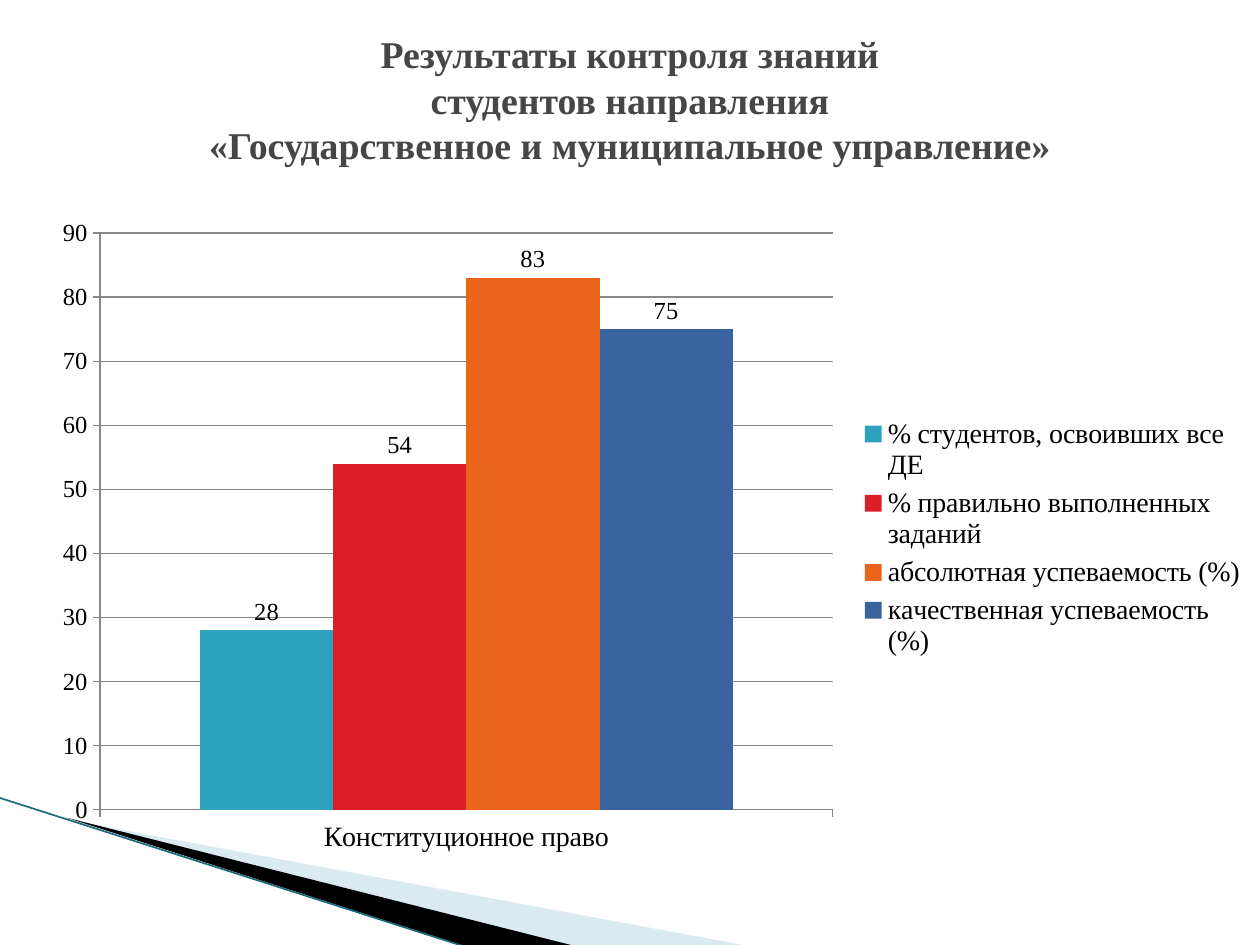
from lxml import etree
from pptx import Presentation
from pptx import util as u
from pptx.chart.data import CategoryChartData
from pptx.dml.color import RGBColor
from pptx.enum import chart as ch, shapes, text
from pptx.oxml import parse_xml
from pptx.oxml.ns import nsdecls, qn

FONT = "Times New Roman"
BLACK = RGBColor(0, 0, 0)
GREY = RGBColor(0x46, 0x46, 0x46)
RULE = RGBColor(0x87, 0x87, 0x87)
PALE = RGBColor(0xA0, 0xCB, 0xDC)
TEAL = RGBColor(0x1B, 0x6B, 0x80)

TITLE = ("Результаты контроля знаний\vстудентов направления\v"
         "«Государственное и муниципальное управление»")
SUBJECT = "Конституционное право"
SERIES = [
    ("% студентов, освоивших все ДЕ", 28, RGBColor(0x2D, 0xA2, 0xBF)),
    ("% правильно выполненных заданий", 54, RGBColor(0xDA, 0x1F, 0x28)),
    ("абсолютная успеваемость (%)", 83, RGBColor(0xEB, 0x64, 0x1B)),
    ("качественная успеваемость (%)", 75, RGBColor(0x39, 0x63, 0x9D)),
]


def style(font, size, color=BLACK, bold=False):
    looks = {"name": FONT, "size": u.Pt(size), "bold": bold}
    for key, value in looks.items():
        setattr(font, key, value)
    font.color.rgb = color


def wedge(slide, points, color, alpha=None):
    first, *rest = [(u.Inches(x), u.Inches(y)) for x, y in points]
    pen = slide.shapes.build_freeform(*first)
    pen.add_line_segments(rest, close=True)
    shape = pen.convert_to_shape()
    shape.shadow.inherit = False
    shape.fill.solid()
    shape.fill.fore_color.rgb = color
    shape.line.fill.background()
    if alpha:
        tint = shape.fill._xPr.find(qn("a:solidFill"))[0]
        etree.SubElement(tint, qn("a:alpha"), val=str(alpha * 1000))


def stroke(slide, start, end, color, width):
    ends = [u.Inches(n) for n in (*start, *end)]
    line = slide.shapes.add_connector(shapes.MSO_CONNECTOR.STRAIGHT, *ends)
    line.line.color.rgb = color
    line.line.width = u.Pt(width)
    etree.SubElement(line._element.spPr, qn("a:effectLst"))


def layout(x, y, w, h, inner=False):
    target = '<c:layoutTarget val="inner"/>' if inner else ""
    return parse_xml(
        f'<c:layout {nsdecls("c")}><c:manualLayout>{target}'
        '<c:xMode val="edge"/><c:yMode val="edge"/>'
        f'<c:x val="{x}"/><c:y val="{y}"/><c:w val="{w}"/><c:h val="{h}"/>'
        '</c:manualLayout></c:layout>')


def place(parent, index, box):
    for old in parent.findall(qn("c:layout")):
        parent.remove(old)
    parent.insert(index, box)


def title(slide, words):
    box = slide.shapes.add_textbox(*map(u.Inches, (0.5, 0.16, 9, 1.25)))
    frame = box.text_frame
    frame.word_wrap = True
    frame.vertical_anchor = text.MSO_ANCHOR.MIDDLE
    para = frame.paragraphs[0]
    para.text = words
    para.alignment = text.PP_ALIGN.CENTER
    for run in para.runs:
        style(run.font, 21.6, GREY, True)


def graph(slide):
    data = CategoryChartData()
    data.categories = [SUBJECT]
    for name, value, _ in SERIES:
        data.add_series(name, [value])
    area = map(u.Inches, (0.31, 1.64, 9.69, 5.26))
    chart = slide.shapes.add_chart(
        ch.XL_CHART_TYPE.COLUMN_CLUSTERED, *area, data).chart
    chart.has_title = False
    style(chart.font, 18)

    # Columns and their labels
    plot = chart.plots[0]
    plot.vary_by_categories = False
    plot.gap_width = 150
    plot.overlap = 0
    for bar, (_, _, color) in zip(plot.series, SERIES):
        bar.format.fill.solid()
        bar.format.fill.fore_color.rgb = color
        tags = bar.data_labels
        tags.show_value = True
        tags.position = ch.XL_LABEL_POSITION.OUTSIDE_END
        style(tags.font, 14)

    # Axes
    for axis, size in ((chart.category_axis, 16), (chart.value_axis, 14)):
        style(axis.tick_labels.font, size)
        axis.major_tick_mark = ch.XL_TICK_MARK.OUTSIDE
        axis.format.line.color.rgb = RULE
    scale = chart.value_axis
    limits = {"minimum_scale": 0, "maximum_scale": 90, "major_unit": 10}
    for key, value in limits.items():
        setattr(scale, key, value)
    scale.major_gridlines.format.line.color.rgb = RULE

    # Legend and plot area
    chart.has_legend = True
    legend = chart.legend
    legend.position = ch.XL_LEGEND_POSITION.RIGHT
    legend.include_in_layout = False
    style(legend.font, 16)
    place(legend._element, 1, layout(0.67, 0.31, 0.32, 0.38))
    place(plot._element.getparent(), 0, layout(0.05, 0.04, 0.6, 0.87, True))


def main():
    deck = Presentation()
    deck.slide_width, deck.slide_height = u.Inches(10), u.Inches(7.5)
    slide = deck.slides.add_slide(deck.slide_layouts[6])

    # Corner decoration
    wedge(slide, [(0.55, 6.51), (5.95, 7.51), (4.56, 7.51)], PALE, 40)
    wedge(slide, [(0.53, 6.49), (4.57, 7.51), (3.72, 7.52)], BLACK)
    stroke(slide, (-0.01, 6.33), (3.71, 7.52), TEAL, 0.95)

    # Content
    graph(slide)
    title(slide, TITLE)
    deck.save("out.pptx")


if __name__ == "__main__":
    main()
